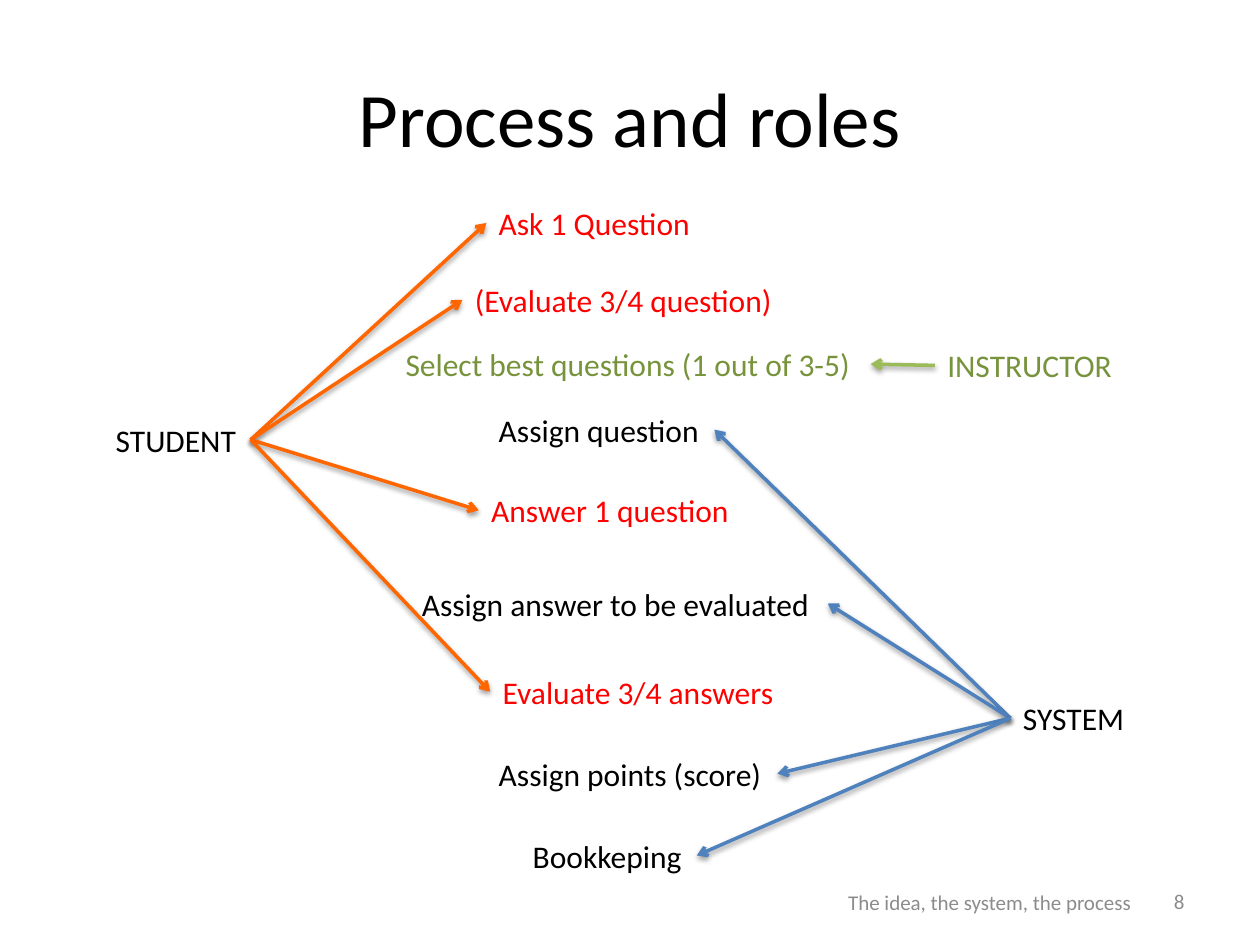
from lxml import etree
from pptx import Presentation
from pptx.dml.color import RGBColor
from pptx.enum.shapes import MSO_CONNECTOR
from pptx.enum.text import MSO_ANCHOR, MSO_AUTO_SIZE, PP_ALIGN
from pptx.oxml.ns import qn
from pptx.util import Inches, Pt

STRAIGHT = MSO_CONNECTOR.STRAIGHT
MIDDLE, TOP = MSO_ANCHOR.MIDDLE, MSO_ANCHOR.TOP
LEFT, CENTER, RIGHT = PP_ALIGN.LEFT, PP_ALIGN.CENTER, PP_ALIGN.RIGHT
GROW = MSO_AUTO_SIZE.SHAPE_TO_FIT_TEXT
LEFT_SIDE, RIGHT_SIDE = 1, 3
LABEL_HEIGHT = 0.4
BLACK, RED, GREEN, GRAY = "000000", "FF0000", "77933C", "8C8C8C"

# role: left, top, width, text colour, arrow colour, side arrows leave, side they reach
ROLES = {
    "STUDENT": (0, 1.72, 1.17, BLACK, "FF6600", RIGHT_SIDE, LEFT_SIDE),
    "INSTRUCTOR": (6.6, 1.13, 1.53, GREEN, "9BBB59", LEFT_SIDE, RIGHT_SIDE),
    "SYSTEM": (7.2, 3.93, 1.02, BLACK, "4F81BD", LEFT_SIDE, RIGHT_SIDE),
}
TASKS = [
    ("Ask 1 Question", 3.04, 0, 1.74, RED, "STUDENT"),
    ("(Evaluate 3/4 question)", 2.85, 0.61, 2.6, RED, "STUDENT"),
    ("Select best questions (1 out of 3-5)", 2.3, 1.12, 3.79, GREEN, "INSTRUCTOR"),
    ("Assign question", 3.04, 1.64, 1.81, BLACK, "SYSTEM"),
    ("Answer 1 question", 2.98, 2.28, 2.11, RED, "STUDENT"),
    ("Assign answer to be evaluated", 2.43, 3.02, 3.32, BLACK, "SYSTEM"),
    ("Evaluate 3/4 answers", 3.07, 3.72, 2.39, RED, "STUDENT"),
    ("Assign points (score)", 3.04, 4.37, 2.31, BLACK, "SYSTEM"),
    ("Bookkeping", 3.31, 5.02, 1.4, BLACK, "SYSTEM"),
]


def color(hex_string):
    """Return the colour for a hex string."""
    return RGBColor.from_string(hex_string)


def add_text(slide, box, text, size, hex_color, align=LEFT, anchor=TOP, wrap=True):
    """Add a text box of one paragraph and return it."""
    shape = slide.shapes.add_textbox(*(Inches(length) for length in box))
    text_frame = shape.text_frame
    text_frame.text = text
    text_frame.word_wrap = wrap
    text_frame.vertical_anchor = anchor
    if not wrap:
        text_frame.auto_size = GROW
    paragraph = text_frame.paragraphs[0]
    paragraph.alignment = align
    font = paragraph.runs[0].font
    font.name, font.size = "Calibri", Pt(size)
    font.color.rgb = color(hex_color)
    return shape


def add_arrow(slide, start, start_side, end, end_side, hex_color):
    """Join two shapes with a shadowed arrow."""
    connector = slide.shapes.add_connector(STRAIGHT, 0, 0, 0, 0)
    connector.begin_connect(start, start_side)
    connector.end_connect(end, end_side)
    connector.line.color.rgb = color(hex_color)
    connector.line.width = Pt(2)
    properties = connector._element.spPr
    etree.SubElement(properties.find(qn("a:ln")), qn("a:tailEnd"), type="arrow")
    effects = etree.SubElement(properties, qn("a:effectLst"))
    shadow = etree.SubElement(effects, qn("a:outerShdw"), blurRad=str(Pt(3.1)),
                              dist=str(Pt(1.6)), dir="5400000", rotWithShape="0")
    shade = etree.SubElement(shadow, qn("a:srgbClr"), val=BLACK)
    etree.SubElement(shade, qn("a:alpha"), val="38000")


def add_title(slide, box):
    """Place the slide title in the box."""
    add_text(slide, box, "Process and roles", 44, BLACK, CENTER, MIDDLE)


def add_process(slide, left, top):
    """Place the roles, their tasks and the arrows from the given corner."""
    def add_label(text, x, y, width, hex_color):
        """Add one label relative to the corner."""
        box = (left + x, top + y, width, LABEL_HEIGHT)
        return add_text(slide, box, text, 18, hex_color, wrap=False)

    roles = {name: add_label(name, *values[:4]) for name, values in ROLES.items()}
    for *label, role in TASKS:
        task = add_label(*label)
        arrow_color, start_side, end_side = ROLES[role][4:]
        add_arrow(slide, roles[role], start_side, task, end_side, arrow_color)


def add_footer(slide, left, top):
    """Place the footer text and slide number from the given corner."""
    add_text(slide, (left, top, 3.17, 0.4), "The idea, the system, the process",
             12, GRAY, CENTER, MIDDLE)
    add_text(slide, (left + 0.9, top - 0.01, 2.33, 0.4), "8", 12, GRAY, RIGHT, MIDDLE)


def main():
    """Build and save the presentation."""
    presentation = Presentation()
    presentation.slide_width, presentation.slide_height = Inches(10), Inches(7.5)
    slide = presentation.slides.add_slide(presentation.slide_layouts[6])
    add_title(slide, (0.5, 0.3, 9, 1.25))
    add_process(slide, 0.82, 1.57)
    add_footer(slide, 6.27, 6.96)
    presentation.save("out.pptx")


if __name__ == "__main__":
    main()
